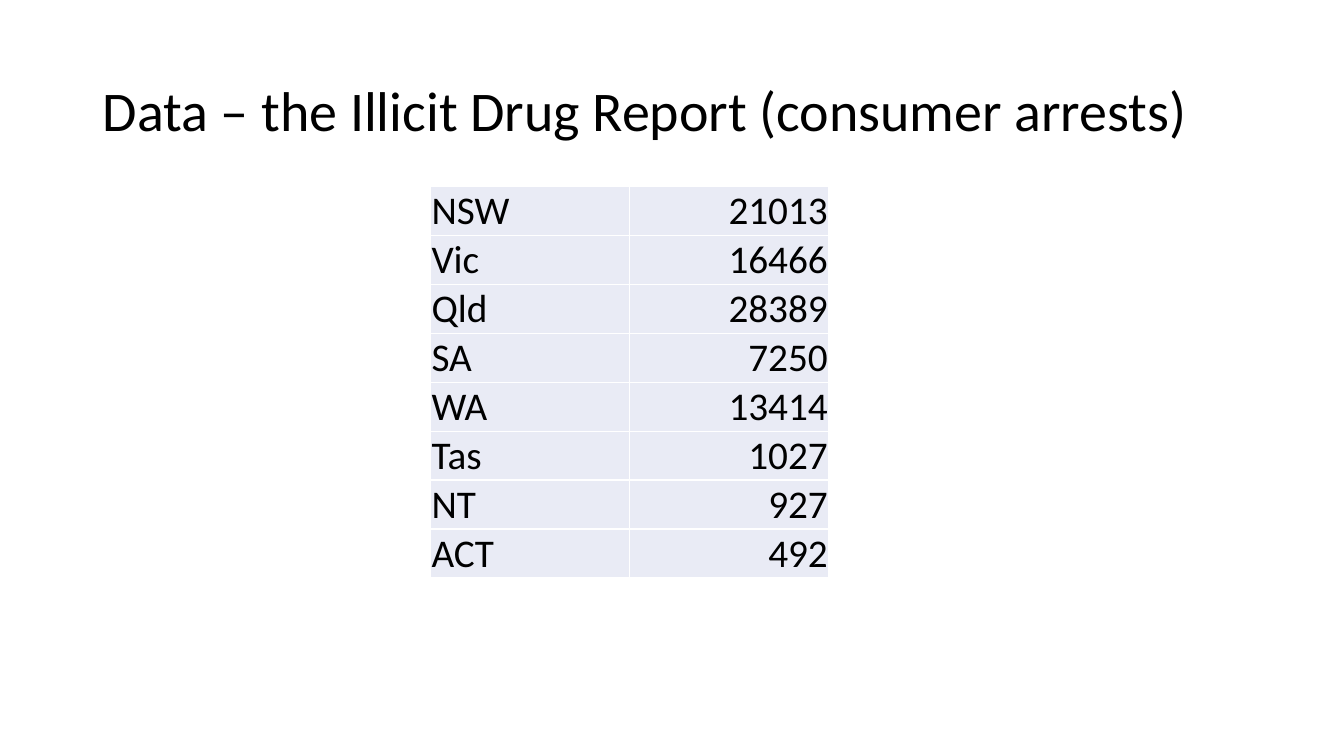
"""Build a slide with a table of consumer arrests by state."""
from lxml.etree import SubElement
from pptx import Presentation
from pptx.dml.color import RGBColor
from pptx.enum.text import MSO_ANCHOR as ANCHOR, PP_ALIGN as ALIGN
from pptx.oxml.ns import qn
from pptx.util import Inches, Pt

BLACK = RGBColor(0x00, 0x00, 0x00)
WHITE = RGBColor(0xFF, 0xFF, 0xFF)
PALE_BLUE = RGBColor(0xE9, 0xEB, 0xF5)

ARRESTS = [
    ("NSW", 21013),
    ("Vic", 16466),
    ("Qld", 28389),
    ("SA", 7250),
    ("WA", 13414),
    ("Tas", 1027),
    ("NT", 927),
    ("ACT", 492),
]
COLUMNS = [(ALIGN.LEFT, ANCHOR.MIDDLE), (ALIGN.RIGHT, ANCHOR.BOTTOM)]
COL_W, ROW_H = 1.975, 0.48
MARGINS = {
    "margin_left": Inches(0.01),
    "margin_right": Inches(0.01),
    "margin_top": Inches(0.01),
    "margin_bottom": 0,
}


def write(p, text, size, align):
    p.alignment = align
    r = p.add_run()
    r.text = text
    r.font.name = "Calibri"
    r.font.size = Pt(size)
    r.font.color.rgb = BLACK


def add_borders(cell):
    tc_pr = cell._tc.get_or_add_tcPr()
    for side in ("a:lnL", "a:lnR", "a:lnT", "a:lnB"):
        ln = SubElement(tc_pr, qn(side), w=str(Pt(1)))
        fill = SubElement(ln, qn("a:solidFill"))
        SubElement(fill, qn("a:srgbClr"), val=str(WHITE))


prs = Presentation()
prs.slide_width, prs.slide_height = Inches(13.33), Inches(7.5)
s = prs.slides.add_slide(prs.slide_layouts[5])

title = s.shapes.title
title.left, title.top = Inches(0.92), Inches(0.4)
title.width, title.height = Inches(11.5), Inches(1.45)
tf = title.text_frame
tf.vertical_anchor = ANCHOR.MIDDLE
p = tf.paragraphs[0]
p.line_spacing = 0.9
write(p, "Data – the Illicit Drug Report (consumer arrests)", 40, ALIGN.LEFT)

table = s.shapes.add_table(
    len(ARRESTS), len(COLUMNS), Inches(4.27), Inches(1.85),
    Inches(COL_W * len(COLUMNS)), Inches(ROW_H * len(ARRESTS)),
).table
table.first_row = table.horz_banding = False

for i, row in enumerate(ARRESTS):
    for j, (value, (align, anchor)) in enumerate(zip(row, COLUMNS)):
        cell = table.cell(i, j)
        for name, margin in MARGINS.items():
            setattr(cell, name, margin)
        cell.vertical_anchor = anchor
        add_borders(cell)
        cell.fill.solid()
        cell.fill.fore_color.rgb = PALE_BLUE
        write(cell.text_frame.paragraphs[0], str(value), 28, align)

prs.save("out.pptx")
